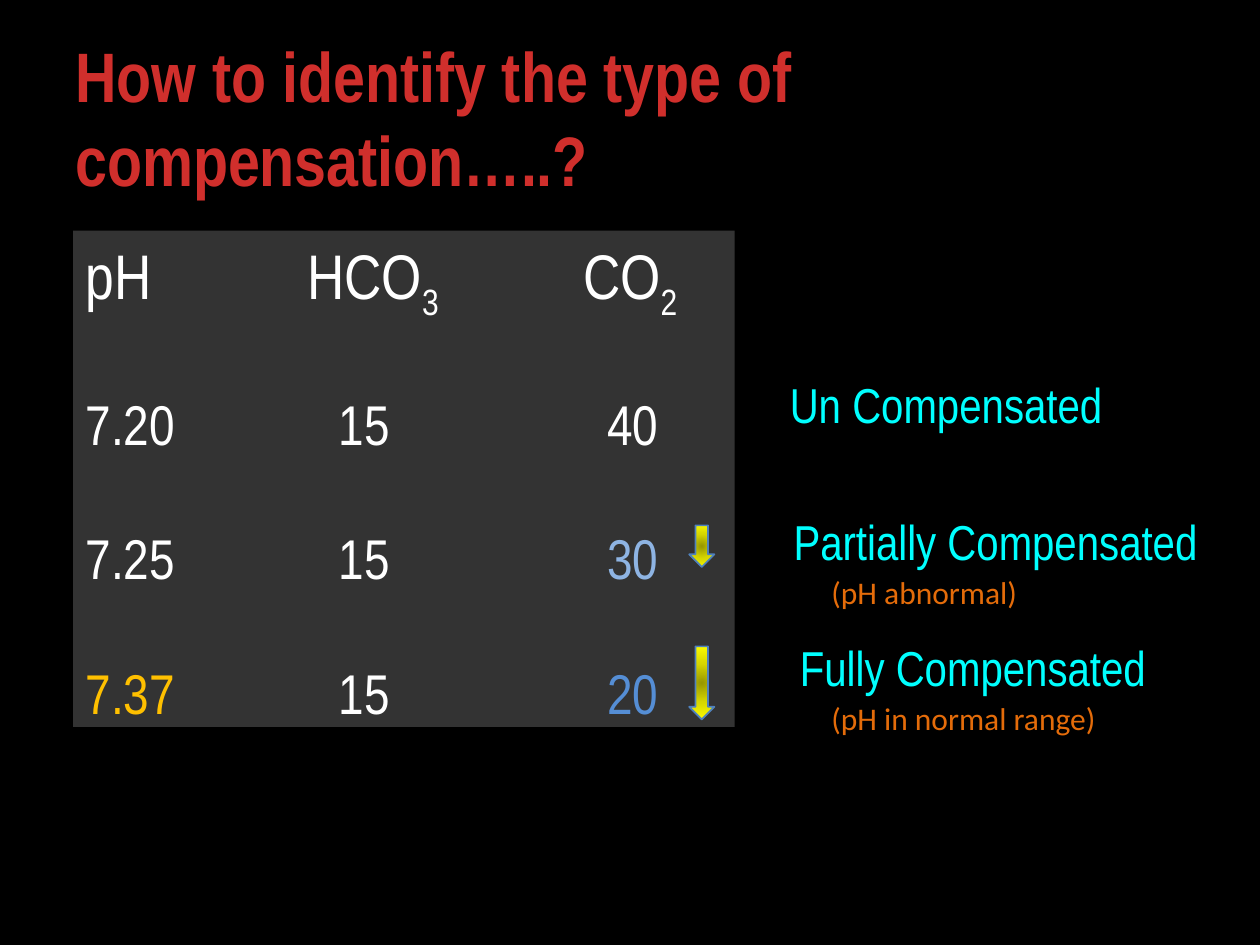
"""Build a slide on identifying the type of acid-base compensation."""
from lxml import etree
from pptx import Presentation
from pptx import util as u
from pptx.dml.color import RGBColor
from pptx.enum import shapes, text
from pptx.oxml import parse_xml
from pptx.oxml.ns import nsdecls, qn

COLORS = {
    "background": "000000", "title": "D02F2C", "panel": "333333",
    "white": "FFFFFF", "normal": "FFC000", "low": "8EB4E3",
    "lower": "558ED5", "label": "00FFFF", "note": "E46C0A",
    "outline": "4F81BD",
}
ARROW_STOPS = ((0, "979700"), (50, "D7D700"), (100, "FFFF00"))


def rgb(name):
    return RGBColor.from_string(COLORS[name])


def add_run(p, content, size=32, color="white", font="Arial Narrow", bold=False, sub=False):
    r = p.add_run()
    r.text = content
    r.font.size = u.Pt(size)
    r.font.name = font
    r.font.bold = bold
    r.font.color.rgb = rgb(color)
    if sub:
        r.font._element.set("baseline", "-25000")
    return r


class SlideBuilder:
    def __init__(self, prs):
        self.s = prs.slides.add_slide(prs.slide_layouts[6])
        self.s.background.fill.solid()
        self.s.background.fill.fore_color.rgb = rgb("background")

    def shape(self, kind, *box):
        sp = self.s.shapes.add_shape(kind, *map(u.Inches, box))
        sp.shadow.inherit = False
        return sp

    def textbox(self, content, *box, wrap=False, **style):
        tf = self.s.shapes.add_textbox(*map(u.Inches, box)).text_frame
        tf.word_wrap = wrap
        tf.vertical_anchor = text.MSO_ANCHOR.MIDDLE if wrap else text.MSO_ANCHOR.TOP
        add_run(tf.paragraphs[0], content, **style)

    def panel(self, rows, *box):
        sp = self.shape(shapes.MSO_SHAPE.RECTANGLE, *box)
        sp.fill.solid()
        sp.fill.fore_color.rgb = rgb("panel")
        sp.line.fill.background()
        tf = sp.text_frame
        tf.word_wrap = True
        tf.vertical_anchor = text.MSO_ANCHOR.TOP
        for i, (tabs, runs) in enumerate(rows):
            p = tf.paragraphs[0] if i == 0 else tf.add_paragraph()
            p.alignment = text.PP_ALIGN.LEFT
            p.space_before = u.Pt(38.3 if i else 0)
            tab_list = etree.SubElement(p._p.get_or_add_pPr(), qn("a:tabLst"))
            for tab in tabs:
                etree.SubElement(tab_list, qn("a:tab"), pos=str(u.Inches(tab)), algn="l")
            for content, style in runs:
                add_run(p, content, **style)

    def down_arrow(self, *box):
        sp = self.shape(shapes.MSO_SHAPE.DOWN_ARROW, *box)
        stops = "".join(f'<a:gs pos="{pos * 1000}"><a:srgbClr val="{color}"/></a:gs>'
                        for pos, color in ARROW_STOPS)
        fill = parse_xml(
            f'<a:gradFill {nsdecls("a")} rotWithShape="1"><a:gsLst>{stops}</a:gsLst>'
            '<a:path path="circle"><a:fillToRect l="50000" t="50000" r="50000" b="50000"/>'
            '</a:path></a:gradFill>')
        sp._element.spPr.find(qn("a:prstGeom")).addnext(fill)
        sp.line.color.rgb = rgb("outline")
        sp.line.width = u.Pt(1)


def main():
    prs = Presentation()
    prs.slide_width, prs.slide_height = u.Inches(10), u.Inches(7.5)
    slide = SlideBuilder(prs)
    slide.textbox("How to identify the type of compensation…..?", 0.5, 0.3, 9, 1.25,
                  wrap=True, size=40, color="title", bold=True)

    head, sub = {"size": 36}, {"size": 36, "sub": True}
    rows = [((1.76, 3.95), [("pH\tHCO", head), ("3", sub), ("\tCO", head), ("2", sub)])]
    for ph, ph_color, co2, co2_color in (
            ("7.20", "white", "40", "white"),
            ("7.25", "white", "30", "low"),
            ("7.37", "normal", "20", "lower")):
        rows.append(((2.01, 4.14), [(ph, {"color": ph_color}), ("\t15\t", {}),
                                    (co2, {"color": co2_color})]))
    slide.panel(rows, 0.58, 1.83, 5.25, 3.94)

    for top, height in ((4.17, 0.33), (5.13, 0.58)):
        slide.down_arrow(5.47, top, 0.2, height)

    for label, left, top, width in (
            ("Un Compensated", 6.17, 2.92, 2.71),
            ("Partially Compensated", 6.2, 4.01, 3.44),
            ("Fully Compensated", 6.25, 5.01, 2.98)):
        slide.textbox(label, left, top, width, 0.57, size=28, color="label")
    for note, top, width in (("(pH abnormal)", 4.5, 1.69), ("(pH in normal range)", 5.5, 2.33)):
        slide.textbox(note, 6.5, top, width, 0.4, size=18, color="note", font="Calibri")
    prs.save("out.pptx")


if __name__ == "__main__":
    main()
